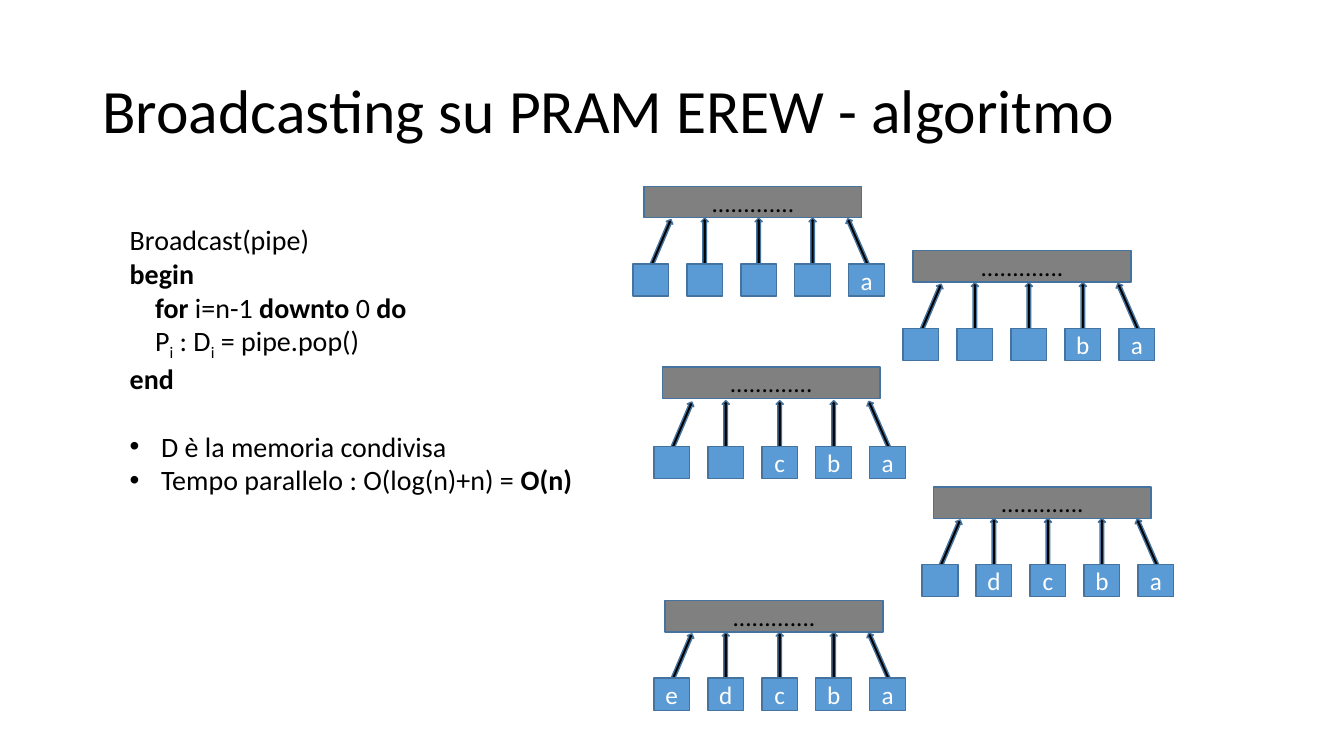
from pptx import Presentation
from pptx import util as u
from pptx.dml.color import RGBColor
from pptx.enum import shapes, text
from pptx.oxml.ns import qn
from lxml import etree

FONT = "Calibri"
BLACK = RGBColor(0x00, 0x00, 0x00)
WHITE = RGBColor(0xFF, 0xFF, 0xFF)
GREY = RGBColor(0x80, 0x80, 0x80)
BLUE = RGBColor(0x5B, 0x9B, 0xD5)
OUTLINE = RGBColor(0x43, 0x73, 0x9E)

# Content: each run is (text, style), style being "", "bold" or "sub"
TITLE = "Broadcasting su PRAM EREW - algoritmo"
# (runs, kind of line)
ALGORITHM = [
    ([("Broadcast(pipe)", "")], "plain"),
    ([("begin", "bold")], "plain"),
    ([("for ", "bold"), ("i=n-1 ", ""), ("downto ", "bold"), ("0 ", ""), ("do", "bold")], "nested"),
    ([("P", ""), ("i", "sub"), (" : D", ""), ("i", "sub"), (" = pipe.pop()", "")], "nested"),
    ([("end", "bold")], "plain"),
    ([("D è la memoria condivisa", "")], "first bullet"),
    ([("Tempo parallelo : O(log(n)+n) = ", ""), ("O(n)", "bold")], "bullet"),
]
PIPE_LABEL = "............."
# (pipe left and top, first cell left and top, cell values), in cm
STEPS = [
    ((16.23, 4.70), (15.95, 6.65), ["", "", "", "", "a"]),
    ((23.01, 6.32), (22.76, 8.28), ["", "", "", "b", "a"]),
    ((16.69, 9.25), (16.48, 11.25), ["", "", "c", "b", "a"]),
    ((23.52, 12.27), (23.24, 14.22), ["", "d", "c", "b", "a"]),
    ((16.76, 15.14), (16.48, 17.09), ["e", "d", "c", "b", "a"]),
]
# Arrow per cell: (rotation, shift from cell centre, rise above cell top)
ARROWS = [(293, 0.19, 0.46), (270, 0, 0.43), (270, 0, 0.43), (270, 0, 0.43), (246.5, -0.15, 0.48)]

PIPE_SIZE = (5.49, 0.79)
CELL_SIZE = (0.9, 0.81)
ARROW_SIZE = (1.63, 0.18)
CELL_PITCH = 1.36


def write(paragraph, content, size=18, color=BLACK, style="", align=text.PP_ALIGN.LEFT):
    paragraph.alignment = align
    run = paragraph.add_run()
    run.text = content
    font = run.font
    font.name, font.size, font.bold = FONT, u.Pt(size), style == "bold"
    font.color.rgb = color
    if style == "sub":
        font._element.set("baseline", "-25000")


def add_block(group, preset, left, top, size, fill, label="", color=WHITE):
    shape = group.shapes.add_shape(preset, u.Cm(left), u.Cm(top), *map(u.Cm, size))
    shape.shadow.inherit = False
    shape.fill.solid()
    shape.fill.fore_color.rgb = fill
    shape.line.color.rgb = OUTLINE
    shape.line.width = u.Pt(1)
    if label:
        shape.text_frame.vertical_anchor = text.MSO_ANCHOR.MIDDLE
        write(shape.text_frame.paragraphs[0], label, color=color, align=text.PP_ALIGN.CENTER)
    return shape


def format_line(paragraph, kind):
    properties = paragraph._p.get_or_add_pPr()
    if kind == "nested":
        properties.set("marL", str(u.Cm(0.64)))
    elif "bullet" in kind:
        properties.set("marL", str(u.Cm(0.79)))
        properties.set("indent", str(u.Cm(-0.79)))
        if kind == "first bullet":
            paragraph.space_before = u.Pt(24)
        etree.SubElement(properties, qn("a:buFont")).set("typeface", "Arial")
        etree.SubElement(properties, qn("a:buChar")).set("char", "•")


def add_step(slide, pipe, first_cell, values):
    group = slide.shapes.add_group_shape()
    add_block(group, shapes.MSO_SHAPE.RECTANGLE, *pipe, PIPE_SIZE, GREY, PIPE_LABEL, BLACK)
    left, top = first_cell
    for index, (value, (rotation, shift, rise)) in enumerate(zip(values, ARROWS)):
        cell_left = left + index * CELL_PITCH
        arrow_left = cell_left + (CELL_SIZE[0] - ARROW_SIZE[0]) / 2 + shift
        arrow = add_block(group, shapes.MSO_SHAPE.RIGHT_ARROW, arrow_left, top - rise, ARROW_SIZE, BLACK)
        arrow.rotation = rotation
        add_block(group, shapes.MSO_SHAPE.RECTANGLE, cell_left, top, CELL_SIZE, BLUE, value)


def main():
    presentation = Presentation()
    presentation.slide_width, presentation.slide_height = u.Cm(33.87), u.Cm(19.05)
    slide = presentation.slides.add_slide(presentation.slide_layouts[5])

    # Title
    title = slide.shapes.title
    title.left, title.top, title.width, title.height = map(u.Cm, (2.33, 1.01, 29.21, 3.68))
    title.text_frame.vertical_anchor = text.MSO_ANCHOR.MIDDLE
    title.text_frame.auto_size = text.MSO_AUTO_SIZE.NONE
    heading = title.text_frame.paragraphs[0]
    heading.line_spacing = 0.9
    write(heading, TITLE, size=44)

    # Algorithm and its cost
    frame = slide.shapes.add_textbox(*map(u.Cm, (3.02, 5.49, 13.79, 8.38))).text_frame
    frame.word_wrap = True
    for index, (runs, kind) in enumerate(ALGORITHM):
        paragraph = frame.add_paragraph() if index else frame.paragraphs[0]
        for content, style in runs:
            write(paragraph, content, size=20, style=style)
        format_line(paragraph, kind)

    # Successive states of the pipe
    for step in STEPS:
        add_step(slide, *step)

    presentation.save("out.pptx")


if __name__ == "__main__":
    main()
